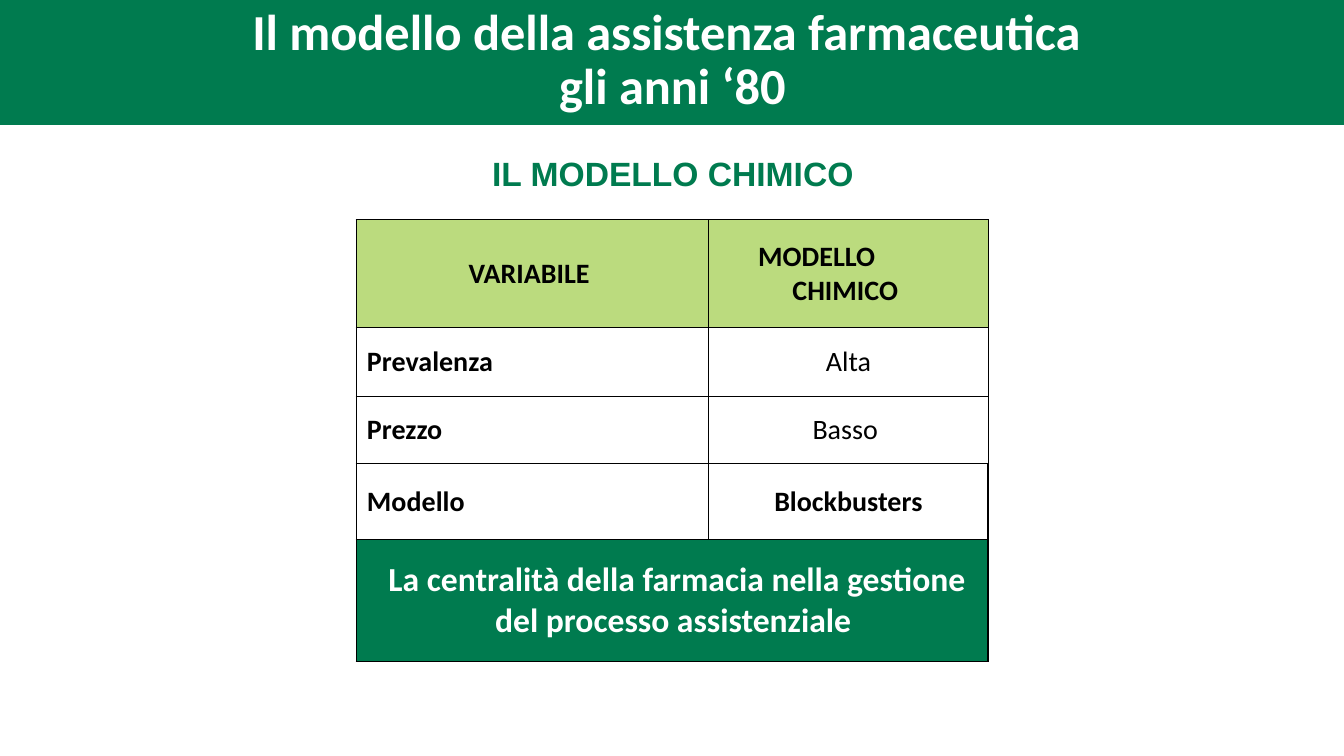
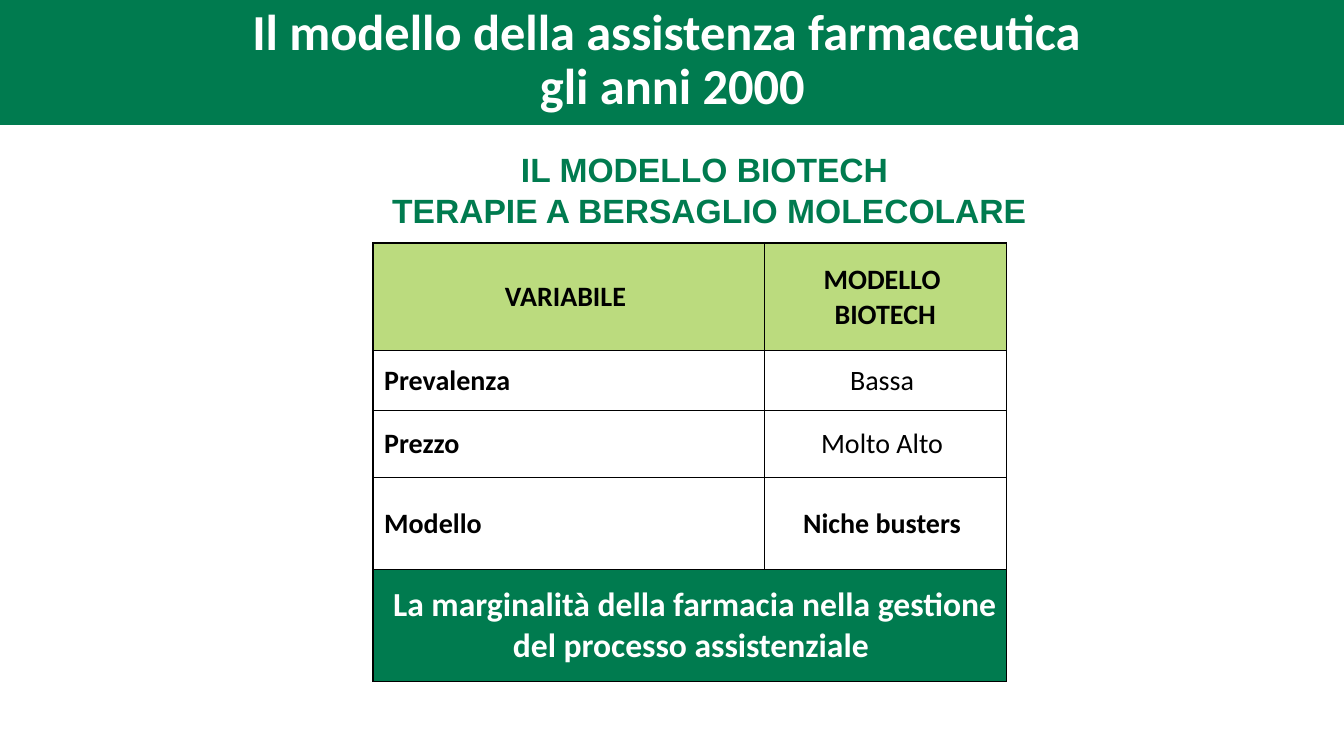
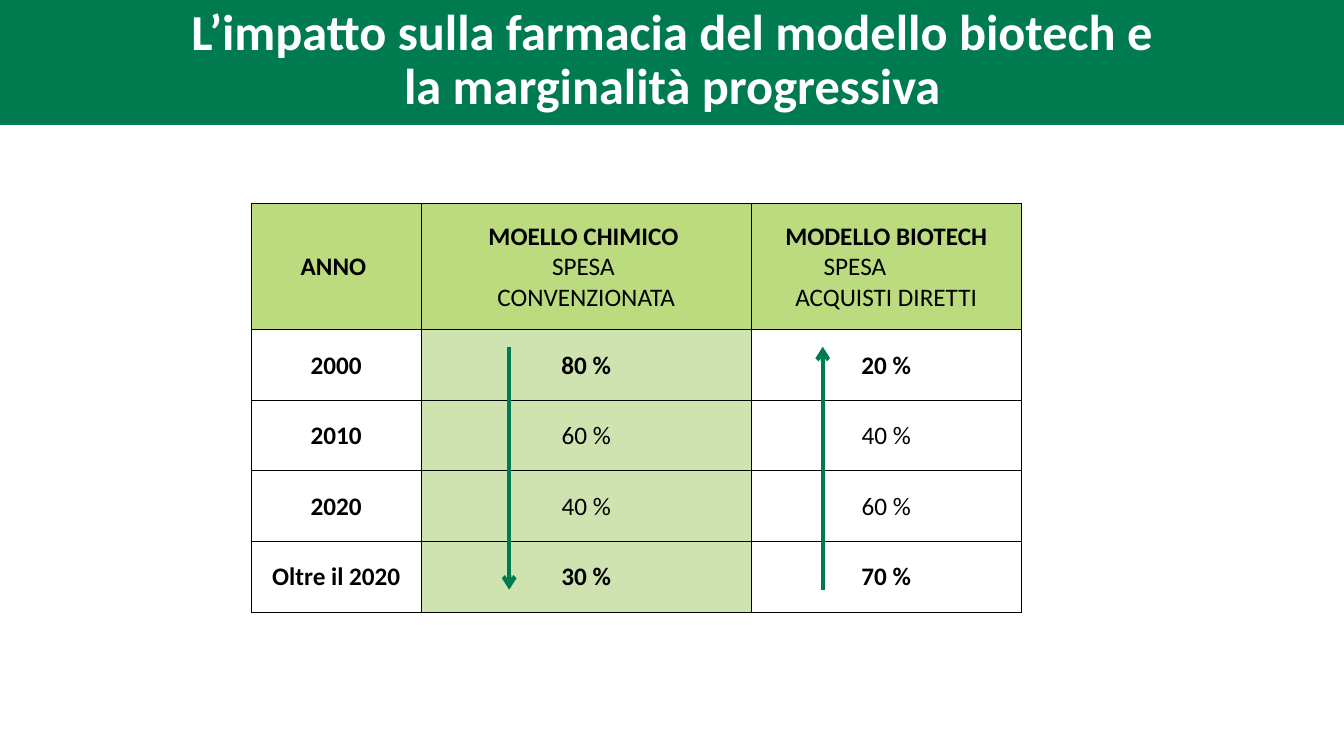
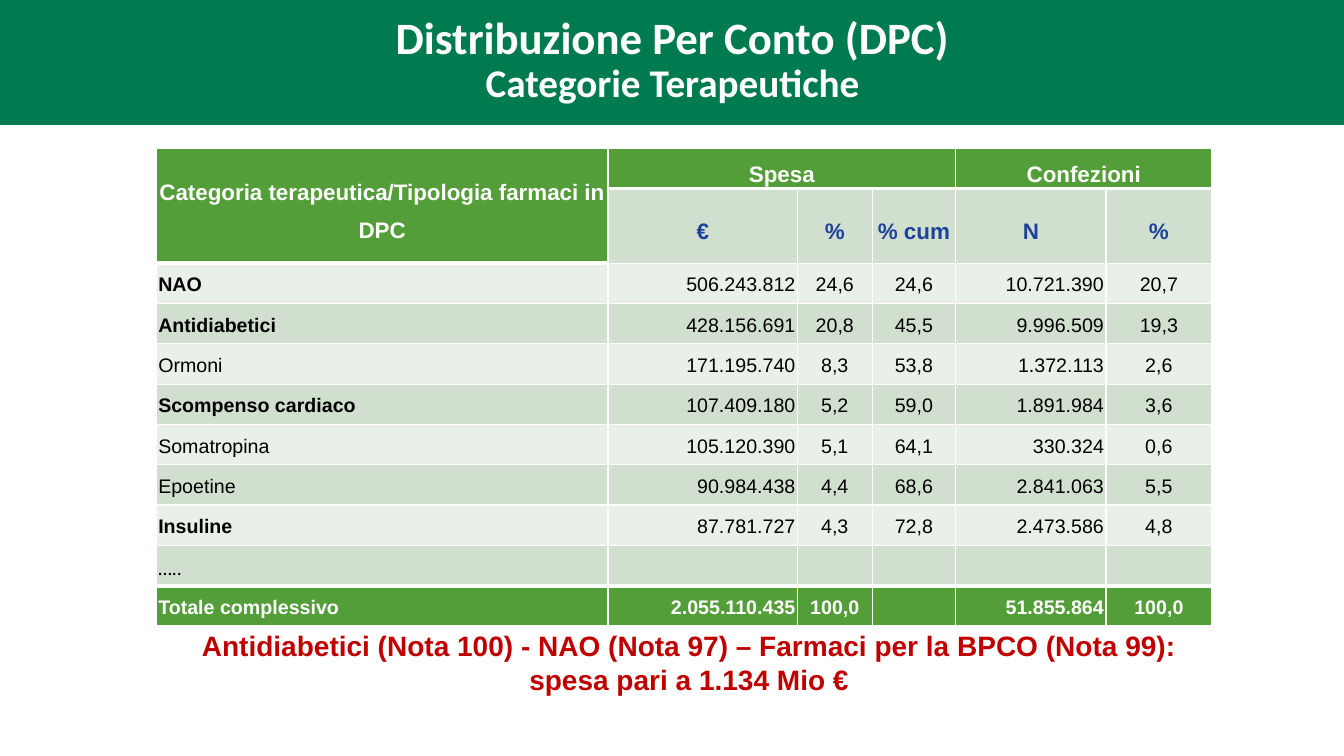
from dataclasses import dataclass, replace

from lxml import etree
from pptx import Presentation
from pptx.dml.color import RGBColor
from pptx.enum.shapes import MSO_CONNECTOR, MSO_SHAPE
from pptx.enum.text import MSO_ANCHOR, MSO_AUTO_SIZE, PP_ALIGN
from pptx.oxml.ns import qn
from pptx.util import Inches, Pt

LEFT, CENTER, RIGHT = PP_ALIGN.LEFT, PP_ALIGN.CENTER, PP_ALIGN.RIGHT
TOP, MIDDLE = MSO_ANCHOR.TOP, MSO_ANCHOR.MIDDLE
RECTANGLE, STRAIGHT = MSO_SHAPE.RECTANGLE, MSO_CONNECTOR.STRAIGHT
NO_FIT = MSO_AUTO_SIZE.NONE


@dataclass(frozen=True)
class Theme:
    """Colours, fonts and type sizes of the deck."""
    green: str = "007B4F"
    lime: str = "BBDB7E"
    pale_lime: str = "CFE3B1"
    leaf: str = "549E39"
    sage: str = "D1DFCE"
    mist: str = "E9F0E8"
    blue: str = "1C429B"
    red: str = "C00000"
    white: str = "FFFFFF"
    black: str = "000000"
    sans: str = "Calibri"
    plain: str = "Arial"
    title: int = 36
    title_small: int = 32
    heading: int = 24
    subtitle: int = 28
    label: int = 20
    year: int = 18
    column: int = 16
    data: int = 14


THEME = Theme()


@dataclass(frozen=True)
class Look:
    """Appearance of a paragraph and of the cell that it opens."""
    size: int
    color: str = THEME.black
    font: str = THEME.sans
    bold: bool = True
    align: int = CENTER
    indent: float = 0
    spacing: float = 1.0
    fill: str = ""
    anchor: int = MIDDLE


TITLE = Look(THEME.title, THEME.white, spacing=0.9)
HEADING = Look(THEME.heading, THEME.green, THEME.plain)
LABEL = Look(THEME.label, fill=THEME.white)
HEADER = replace(LABEL, fill=THEME.lime)
SUMMARY = Look(THEME.heading, THEME.white, indent=0.1, fill=THEME.green)
YEAR = Look(THEME.year)
YEAR_HEADER = replace(YEAR, fill=THEME.lime)
COLUMN = Look(THEME.column, THEME.white, THEME.plain, spacing=1.5, fill=THEME.leaf)
SUBCOLUMN = replace(COLUMN, color=THEME.blue, fill=THEME.sage)
DATA = Look(THEME.data, font=THEME.plain, spacing=1.5, anchor=TOP)


class Deck:
    """Presentation style together with the slide being built."""

    def __init__(self):
        """Set the slide size and the title position of the layout."""
        self.deck = Presentation()
        self.deck.slide_width, self.deck.slide_height = Inches(13.33), Inches(7.5)
        self.layout = self.deck.slide_layouts[5]
        self.place(self.layout.placeholders[0], 0.42, -0.03, 12.5, 1.27)
        self.page = None

    def place(self, shape, left, top, width, height):
        """Move and size a shape."""
        shape.left, shape.top = Inches(left), Inches(top)
        shape.width, shape.height = Inches(width), Inches(height)

    def add_page(self, title, look=TITLE):
        """Start a slide with its title and return the title paragraph."""
        self.page = self.deck.slides.add_slide(self.layout)
        if len(self.deck.slides) == 1:
            self.add_band()
        frame = self.page.shapes.title.text_frame
        frame.auto_size, frame.vertical_anchor = NO_FIT, MIDDLE
        self.set_paragraphs(frame, [(title, look)])
        return frame.paragraphs[0]

    def add_band(self):
        """Put the green title band on the shared layout."""
        band = self.page.shapes.add_shape(
            RECTANGLE, 0, Inches(-0.03), self.deck.slide_width, Inches(1.27))
        band.shadow.inherit = False
        band.fill.solid()
        band.fill.fore_color.rgb = RGBColor.from_string(THEME.green)
        band.line.fill.background()
        self.layout.shapes.element.insert(2, band.element)

    def set_paragraphs(self, frame, paragraphs):
        """Fill a text frame with (text, look) paragraphs."""
        frame.word_wrap = True
        frame.text = "\n".join(text for text, look in paragraphs)
        for para, (text, look) in zip(frame.paragraphs, paragraphs):
            if not text:
                continue
            para.alignment, para.line_spacing = look.align, look.spacing
            if look.indent:
                properties = para._p.get_or_add_pPr()
                properties.set("marL", str(Inches(look.indent)))
                properties.set("indent", "0")
            for span in para.runs:
                span.font.name, span.font.size = look.font, Pt(look.size)
                span.font.bold = look.bold
                span.font.color.rgb = RGBColor.from_string(look.color)

    def add_text(self, text, look, *area):
        """Add a wrapped text box."""
        box = self.page.shapes.add_textbox(*map(Inches, area))
        self.set_paragraphs(box.text_frame, [(text, look)])

    def add_table(self, left, top, columns, rows, cells, border, margins, merges=()):
        """Add a table whose cells are lists of (text, look) paragraphs."""
        frame = self.page.shapes.add_table(
            len(rows), len(columns), Inches(left), Inches(top),
            Inches(sum(columns)), Inches(sum(rows)))
        table = frame.table
        table.first_row = table.horz_banding = False
        for column, width in zip(table.columns, columns):
            column.width = Inches(width)
        for row, height in zip(table.rows, rows):
            row.height = Inches(height)
        for first, last in merges:
            table.cell(*first).merge(table.cell(*last))
        for row, row_cells in enumerate(cells):
            for column, paragraphs in enumerate(row_cells):
                cell = table.cell(row, column)
                self.add_borders(cell, *border)
                if paragraphs:
                    self.fill_cell(cell, paragraphs, margins)
        return table

    def fill_cell(self, cell, paragraphs, margins):
        """Set the text, margins, anchor and fill of a cell."""
        look = paragraphs[0][1]
        (cell.margin_left, cell.margin_top,
         cell.margin_right, cell.margin_bottom) = map(Inches, margins)
        cell.vertical_anchor = look.anchor
        self.set_paragraphs(cell.text_frame, paragraphs)
        if look.fill:
            cell.fill.solid()
            cell.fill.fore_color.rgb = RGBColor.from_string(look.fill)
        else:
            cell.fill.background()

    def add_borders(self, cell, color, width):
        """Draw the four edges of a cell."""
        properties = cell._tc.get_or_add_tcPr()
        for edge in "LRTB":
            line = etree.SubElement(properties, qn("a:ln" + edge), w=str(Pt(width)))
            solid = etree.SubElement(line, qn("a:solidFill"))
            etree.SubElement(solid, qn("a:srgbClr"), val=color)

    def set_edge(self, cell, edge, width):
        """Change the width of one edge of a cell."""
        cell._tc.tcPr.find(qn("a:ln" + edge)).set("w", str(Pt(width)))

    def add_arrow(self, x, start, end):
        """Add a vertical arrow."""
        arrow = self.page.shapes.add_connector(
            STRAIGHT, Inches(x), Inches(start), Inches(x), Inches(end))
        arrow.line.color.rgb = RGBColor.from_string(THEME.green)
        arrow.line.width = Pt(3)
        properties = arrow.element.spPr
        etree.SubElement(properties.find(qn("a:ln")), qn("a:tailEnd"), type="arrow")
        etree.SubElement(properties, qn("a:effectLst"))

    def add_model(self, left, top, columns, rows, header, values, summary, width):
        """Add the table that describes one model of care."""
        names = ("Prevalenza", "Prezzo", "Modello")
        cells = [[[("VARIABILE ", HEADER)], header]]
        for name, value in zip(names, values):
            cells.append([[(name, replace(LABEL, align=LEFT, indent=0.1))],
                          [(value, replace(LABEL, bold=name == "Modello"))]])
        cells.append([[(summary, SUMMARY)], None])
        return self.add_table(left, top, columns, rows, cells, (THEME.black, width),
                              (0.01, 0.01, 0.01, 0), [((4, 0), (4, 1))])


def build_chemical(deck):
    """Build the slide on the chemical model."""
    deck.add_page("Il modello della assistenza farmaceutica \vgli anni ‘80")
    header = [("MODELLO", replace(HEADER, align=LEFT, indent=0.48)), ("CHIMICO ", HEADER)]
    table = deck.add_model(
        3.53, 2.18, (3.5, 2.77), (1.07, 0.68, 0.67, 0.75, 1.21), header,
        ("Alta", "Basso ", "Blockbusters"),
        "La centralità della farmacia nella gestione del processo assistenziale ", 0.5)
    for row in (3, 4):
        deck.set_edge(table.cell(row, 0), "R", 1)
        deck.set_edge(table.cell(row, 1), "R", 1)
    deck.add_text("IL MODELLO CHIMICO ", HEADING, 3.97, 1.47, 5.5, 0.51)


def build_biotech(deck):
    """Build the slide on the biotech model."""
    deck.add_page("Il modello della assistenza farmaceutica \vgli anni 2000")
    deck.add_model(
        3.7, 2.41, (3.88, 2.4), (1.07, 0.59, 0.67, 0.91, 1.11),
        [("MODELLO \vBIOTECH", HEADER)], ("Bassa ", "Molto Alto ", "Niche busters "),
        "La marginalità della farmacia nella gestione del processo assistenziale ", 1)
    deck.add_text("IL MODELLO BIOTECH \vTERAPIE A BERSAGLIO MOLECOLARE",
                  HEADING, 1.15, 1.43, 11.77, 0.91)


def build_impact(deck):
    """Build the slide on the shift of spending between models."""
    deck.add_page("L’impatto sulla farmacia del modello biotech e\v"
                  "la marginalità progressiva")
    light = replace(YEAR_HEADER, bold=False)
    cells = [[
        [("ANNO ", YEAR_HEADER)],
        [("MOELLO CHIMICO ", YEAR_HEADER), ("SPESA ", light), ("CONVENZIONATA", light)],
        [("MODELLO BIOTECH", YEAR_HEADER),
         ("SPESA", replace(light, align=LEFT, indent=0.71)),
         ("ACQUISTI DIRETTI", light)],
    ]]
    shares = (("2000", 80), ("2010", 60), ("2020", 40), ("Oltre il 2020", 30))
    for year, share in shares:
        look = replace(YEAR, bold=share in (80, 30))
        cells.append([[(year, YEAR)],
                      [(f"{share} %", replace(look, fill=THEME.pale_lime))],
                      [(f"{100 - share} %", look)]])
    deck.add_table(2.49, 2.02, (1.69, 3.27, 2.68), (1.25,) + (0.7,) * 4, cells,
                   (THEME.black, 0.5), (0.01, 0.01, 0.01, 0))
    deck.add_arrow(5.05, 3.44, 5.85)
    deck.add_arrow(8.16, 5.85, 3.44)


def build_categories(deck):
    """Build the slide on therapeutic categories."""
    title = deck.add_page("Distribuzione Per Conto (DPC)\vCategorie Terapeutiche",
                          replace(TITLE, size=THEME.title_small))
    title.runs[1].font.size = Pt(THEME.subtitle)
    records = (
        ("NAO", "506.243.812", "24,6", "24,6", "10.721.390", "20,7"),
        ("Antidiabetici", "428.156.691", "20,8", "45,5", "9.996.509", "19,3"),
        ("Ormoni", "171.195.740", "8,3", "53,8", "1.372.113", "2,6"),
        ("Scompenso cardiaco", "107.409.180", "5,2", "59,0", "1.891.984", "3,6"),
        ("Somatropina", "105.120.390", "5,1", "64,1", "330.324", "0,6"),
        ("Epoetine", "90.984.438", "4,4", "68,6", "2.841.063", "5,5"),
        ("Insuline", "87.781.727", "4,3", "72,8", "2.473.586", "4,8"),
        ("…..", "", "", "", "", ""),
        ("Totale complessivo", "2.055.110.435", "100,0", "", "51.855.864", "100,0"),
    )
    strong = ("NAO", "Antidiabetici", "Scompenso cardiaco", "Insuline")
    alignments = (LEFT, RIGHT, CENTER, CENTER, RIGHT, CENTER)
    cells = [
        [[("Categoria terapeutica/Tipologia farmaci in DPC", COLUMN)],
         [("Spesa", COLUMN)], None, None, [("Confezioni", COLUMN)], None],
        [None] + [[(name, SUBCOLUMN)] for name in ("€", "%", "% cum", "N", "%")],
    ]
    for index, record in enumerate(records):
        look = replace(DATA, bold=False, fill=(THEME.mist, THEME.sage)[index % 2])
        if record is records[-1]:
            look = replace(DATA, color=THEME.white, fill=THEME.leaf)
        name_look = replace(look, bold=look.bold or record[0] in strong)
        if record[0] == "…..":
            name_look = replace(name_look, font=THEME.sans)
        looks = [name_look] + [look] * 5
        cells.append([[(text, replace(style, align=align))]
                      for text, style, align in zip(record, looks, alignments)])
    table = deck.add_table(
        1.55, 1.47, (4.48, 1.88, 0.74, 0.83, 1.49, 1.05), (0.4, 0.45) + (0.4,) * 9,
        cells, (THEME.white, 1), (0.02, 0, 0.02, 0),
        [((0, 0), (1, 0)), ((0, 1), (0, 3)), ((0, 4), (0, 5))])
    deck.set_edge(table.cell(1, 0), "B", 3)
    for column in range(6):
        deck.set_edge(table.cell(0, column), "B", 3)
        deck.set_edge(table.cell(10, column), "T", 3)
    deck.add_text("Antidiabetici (Nota 100) - NAO (Nota 97) – Farmaci per la BPCO "
                  "(Nota 99): spesa pari a 1.134 Mio €",
                  Look(THEME.label, THEME.red, THEME.plain), 1.86, 6.19, 9.95, 1.08)


def main():
    """Build and save the deck."""
    deck = Deck()
    for build in (build_chemical, build_biotech, build_impact, build_categories):
        build(deck)
    deck.deck.save("out.pptx")


if __name__ == "__main__":
    main()
